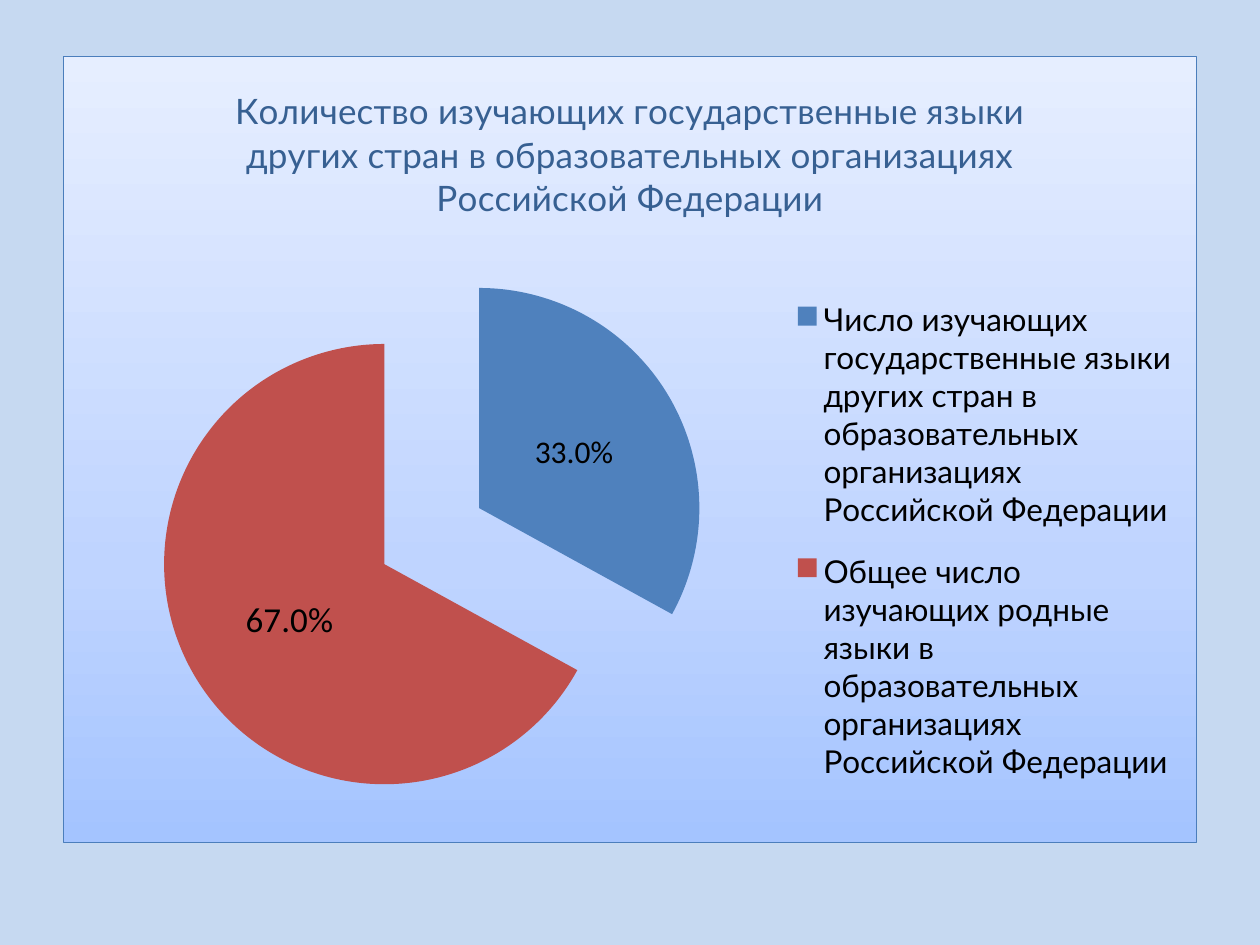
from lxml.etree import SubElement
from pptx import Presentation
from pptx.chart.data import CategoryChartData
from pptx.dml.color import RGBColor
from pptx.enum.chart import XL_CHART_TYPE as ChartType
from pptx.enum.chart import XL_LABEL_POSITION as LabelPosition
from pptx.enum.chart import XL_LEGEND_POSITION as LegendPosition
from pptx.oxml import parse_xml
from pptx.oxml.ns import nsdecls, qn
from pptx.util import Pt

BACKGROUND = RGBColor(0xC6, 0xD9, 0xF1)
TITLE_BLUE = RGBColor(0x37, 0x60, 0x92)
BORDER_BLUE = RGBColor(0x4B, 0x7E, 0xBC)
BLACK = RGBColor(0, 0, 0)
SLICE_COLORS = (RGBColor(0x4F, 0x81, 0xBD), RGBColor(0xC0, 0x50, 0x4D))
GRADIENT = (
    (0, RGBColor(0xA4, 0xC4, 0xFF)),
    (35, RGBColor(0xBF, 0xD4, 0xFF)),
    (100, RGBColor(0xE6, 0xEE, 0xFF)),
)
TITLE = (
    "Количество изучающих государственные языки других стран "
    "в образовательных организациях Российской Федерации"
)
SHARES = {
    "Число изучающих государственные языки других стран "
    "в образовательных организациях Российской Федерации ": 0.33,
    "Общее число изучающих родные языки "
    "в образовательных организациях Российской Федерации ": 0.67,
}
LABEL_SIZES = (18, 20)


def format_font(font, size, name="Calibri", color=BLACK):
    """Set the size, face and colour of a regular font."""
    font.size = Pt(size)
    font.name = name
    font.bold = False
    font.color.rgb = color


def write_text(frame, text, **format):
    """Write text into a frame with the given font format."""
    frame.text = text
    format_font(frame.paragraphs[0].runs[0].font, **format)


def paint_chart_area(chart):
    """Give the chart area its vertical gradient and thin border."""
    stops = "".join(
        f'<a:gs pos="{position * 1000}"><a:srgbClr val="{color}"/></a:gs>'
        for position, color in GRADIENT
    )
    properties = parse_xml(
        f'<c:spPr {nsdecls("c", "a")}>'
        f'<a:gradFill rotWithShape="1"><a:gsLst>{stops}</a:gsLst>'
        '<a:lin ang="16200000" scaled="0"/></a:gradFill>'
        f'<a:ln w="{Pt(0.75)}"><a:solidFill><a:srgbClr val="{BORDER_BLUE}"/>'
        "</a:solidFill></a:ln></c:spPr>"
    )
    chart.element.find(qn("c:chart")).addnext(properties)


def set_layout(parent, inner=False, **fractions):
    """Place a chart part by fractions of the chart area."""
    for old in parent.findall(qn("c:layout")):
        parent.remove(old)
    layout = parse_xml(f'<c:layout {nsdecls("c")}><c:manualLayout/></c:layout>')
    manual = layout[0]
    if inner:
        SubElement(manual, qn("c:layoutTarget")).set("val", "inner")
    for mode in ("xMode", "yMode"):
        SubElement(manual, qn(f"c:{mode}")).set("val", "edge")
    for key, value in fractions.items():
        SubElement(manual, qn(f"c:{key}")).set("val", str(value))
    position = parent.find(qn("c:legendPos"))
    if position is None:
        parent.insert(0, layout)
    else:
        position.addnext(layout)


def format_slices(plot):
    """Colour and pull out the slices and label their shares."""
    plot.vary_by_categories = True
    plot.has_data_labels = True
    labels = plot.data_labels
    labels.show_value = True
    labels.show_percentage = False
    labels.number_format = "0.0%"
    labels.number_format_is_linked = False
    labels.position = LabelPosition.CENTER
    format_font(labels.font, 18)
    series = plot.series[0]
    for index, (color, size) in enumerate(zip(SLICE_COLORS, LABEL_SIZES)):
        point = series.points[index]
        point.format.fill.solid()
        point.format.fill.fore_color.rgb = color
        format_font(point.data_label.font, size)
        point.data_label.position = LabelPosition.CENTER
    explosion = parse_xml(f'<c:explosion {nsdecls("c")} val="25"/>')
    series._element.find(qn("c:dPt")).addprevious(explosion)


def add_share_chart(slide, left, top, width, height):
    """Add the titled pie chart of language learners in the given box."""
    data = CategoryChartData(number_format="0.0%")
    data.categories = list(SHARES)
    data.add_series("Series 1", list(SHARES.values()))
    chart = slide.shapes.add_chart(
        ChartType.PIE, left, top, width, height, data
    ).chart
    format_font(chart.font, 10)
    paint_chart_area(chart)

    chart.has_title = True
    write_text(
        chart.chart_title.text_frame, TITLE, size=20, name="Lato", color=TITLE_BLUE
    )
    chart.chart_title.include_in_layout = False

    chart.has_legend = True
    legend = chart.legend
    legend.position = LegendPosition.RIGHT
    legend.include_in_layout = False
    format_font(legend.font, 18, "Lato")
    set_layout(legend._element, x=0.64, y=0.28, w=0.35, h=0.67)

    format_slices(chart.plots[0])
    plot_area = chart.element.find(qn("c:chart")).find(qn("c:plotArea"))
    set_layout(plot_area, inner=True, x=0.08, y=0.26, w=0.49, h=0.7)


def main():
    """Build the slide and save it."""
    presentation = Presentation()
    presentation.slide_width, presentation.slide_height = Pt(720), Pt(540)
    slide = presentation.slides.add_slide(presentation.slide_layouts[6])
    slide.background.fill.solid()
    slide.background.fill.fore_color.rgb = BACKGROUND
    add_share_chart(slide, Pt(36), Pt(32), Pt(648), Pt(450))
    presentation.save("out.pptx")


if __name__ == "__main__":
    main()
